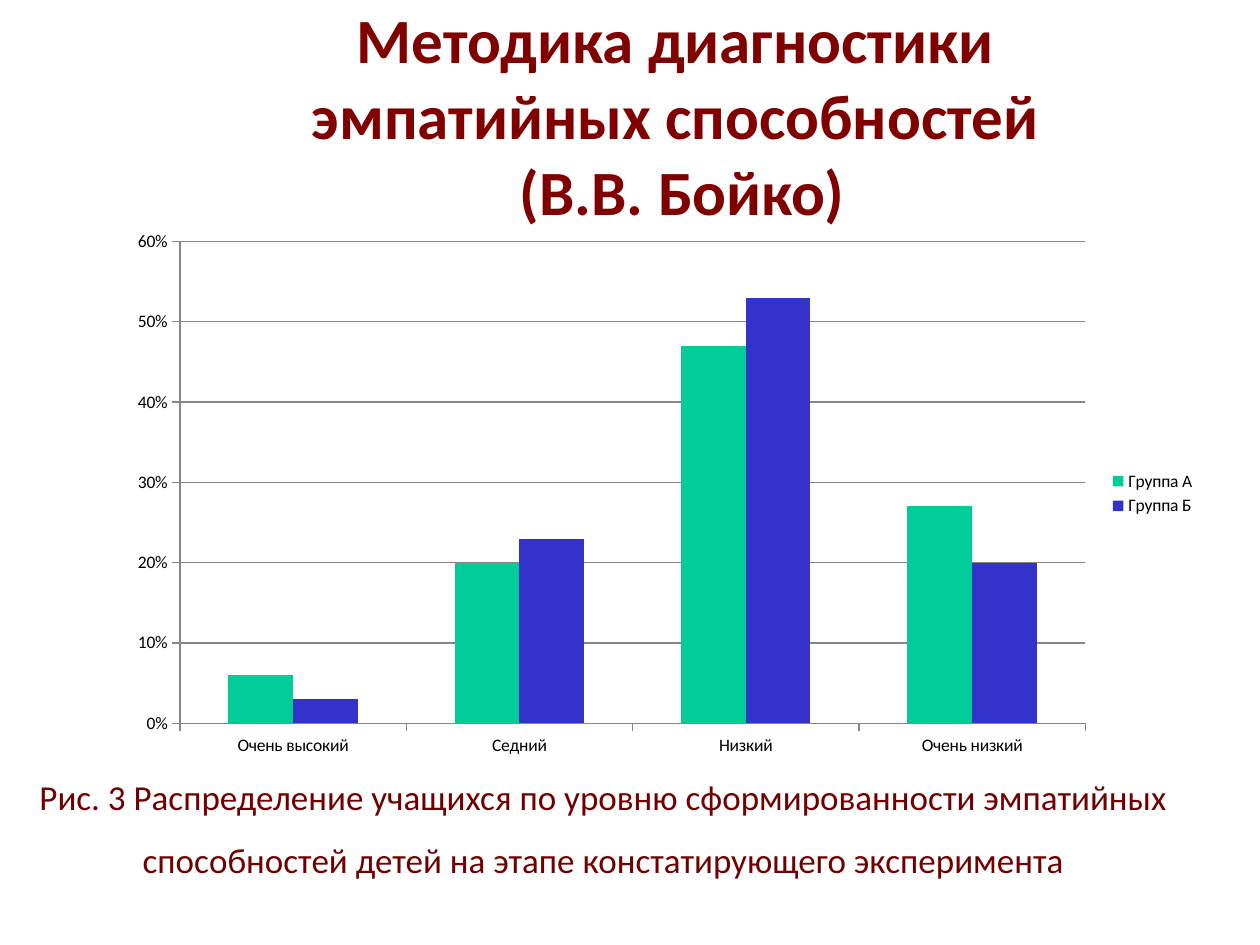
from dataclasses import dataclass

from pptx import Presentation
from pptx.chart.data import CategoryChartData
from pptx.dml.color import RGBColor
from pptx.enum.chart import XL_CHART_TYPE as ChartType
from pptx.enum.chart import XL_LEGEND_POSITION as LegendPosition
from pptx.enum.chart import XL_TICK_MARK as TickMark
from pptx.enum.text import MSO_ANCHOR as Anchor
from pptx.enum.text import MSO_AUTO_SIZE as AutoSize
from pptx.enum.text import PP_ALIGN as Align
from pptx.util import Cm, Pt

FONT = "Calibri"
LINE_GRAY = "868686"


@dataclass
class Area:
    left: float
    top: float
    width: float
    height: float

    def lengths(self) -> tuple:
        return tuple(Cm(v) for v in (self.left, self.top, self.width, self.height))


@dataclass
class Group:
    name: str
    shares: tuple
    color: str


TITLE_AREA = Area(3.38, 0, 20.75, 4.72)
CHART_AREA = Area(2.34, 4.45, 22.02, 11)
CAPTION_AREA = Area(0, 15.09, 24.33, 3.96)

LEVELS = ("Очень высокий", "Седний", "Низкий", "Очень низкий")
GROUPS = (
    Group("Группа А", (0.06, 0.2, 0.47, 0.27), "00CC99"),
    Group("Группа Б", (0.03, 0.23, 0.53, 0.2), "3333CC"),
)


def rgb(value: str) -> RGBColor:
    return RGBColor.from_string(value)


def write(frame, text: str, *, size: float, color: str, bold: bool = False,
          anchor=Anchor.TOP, spacing: float = 1.0) -> None:
    """Fill a text frame with one centred paragraph."""
    frame.text = text
    frame.word_wrap = True
    frame.auto_size = AutoSize.NONE
    frame.vertical_anchor = anchor
    para = frame.paragraphs[0]
    para.alignment = Align.CENTER
    para.line_spacing = spacing
    for span in para.runs:
        font = span.font
        font.name, font.size, font.bold = FONT, Pt(size), bold
        font.color.rgb = rgb(color)


def style_axis(axis) -> None:
    axis.major_tick_mark = TickMark.OUTSIDE
    axis.minor_tick_mark = TickMark.NONE
    axis.format.line.color.rgb = rgb(LINE_GRAY)
    axis.format.line.width = Pt(0.75)


def add_level_chart(page, area: Area) -> None:
    data = CategoryChartData(number_format="0%")
    data.categories = LEVELS
    for group in GROUPS:
        data.add_series(group.name, group.shares)
    chart = page.shapes.add_chart(
        ChartType.COLUMN_CLUSTERED, *area.lengths(), data).chart
    chart.has_title = False
    chart.font.name, chart.font.size = FONT, Pt(10)
    chart.font.color.rgb = rgb("000000")

    # Legend
    chart.has_legend = True
    chart.legend.position = LegendPosition.RIGHT
    chart.legend.include_in_layout = False

    # Axes and gridlines
    style_axis(chart.category_axis)
    values = chart.value_axis
    style_axis(values)
    values.minimum_scale, values.maximum_scale, values.major_unit = 0, 0.6, 0.1
    values.tick_labels.number_format = "0%"
    values.tick_labels.number_format_is_linked = False
    values.has_major_gridlines = True
    grid = values.major_gridlines.format.line
    grid.color.rgb, grid.width = rgb(LINE_GRAY), Pt(0.75)

    # Columns
    plot = chart.plots[0]
    plot.gap_width, plot.overlap, plot.vary_by_categories = 150, 0, False
    for series, group in zip(plot.series, GROUPS):
        series.invert_if_negative = False
        series.format.fill.solid()
        series.format.fill.fore_color.rgb = rgb(group.color)


def main() -> None:
    deck = Presentation()
    deck.slide_width, deck.slide_height = Cm(25.4), Cm(19.05)
    page = deck.slides.add_slide(deck.slide_layouts[5])

    # Title
    title = page.shapes.title
    title.left, title.top, title.width, title.height = TITLE_AREA.lengths()
    write(title.text_frame,
          "Методика диагностики \vэмпатийных способностей \v(В.В. Бойко)",
          size=36, color="800000", bold=True, anchor=Anchor.BOTTOM)

    # Caption under the chart
    caption = page.shapes.add_textbox(*CAPTION_AREA.lengths())
    write(caption.text_frame,
          "Рис. 3 Распределение учащихся по уровню сформированности эмпатийных "
          "способностей детей на этапе констатирующего эксперимента",
          size=20, color="700000", spacing=1.5)

    add_level_chart(page, CHART_AREA)
    deck.save("out.pptx")


if __name__ == "__main__":
    main()
